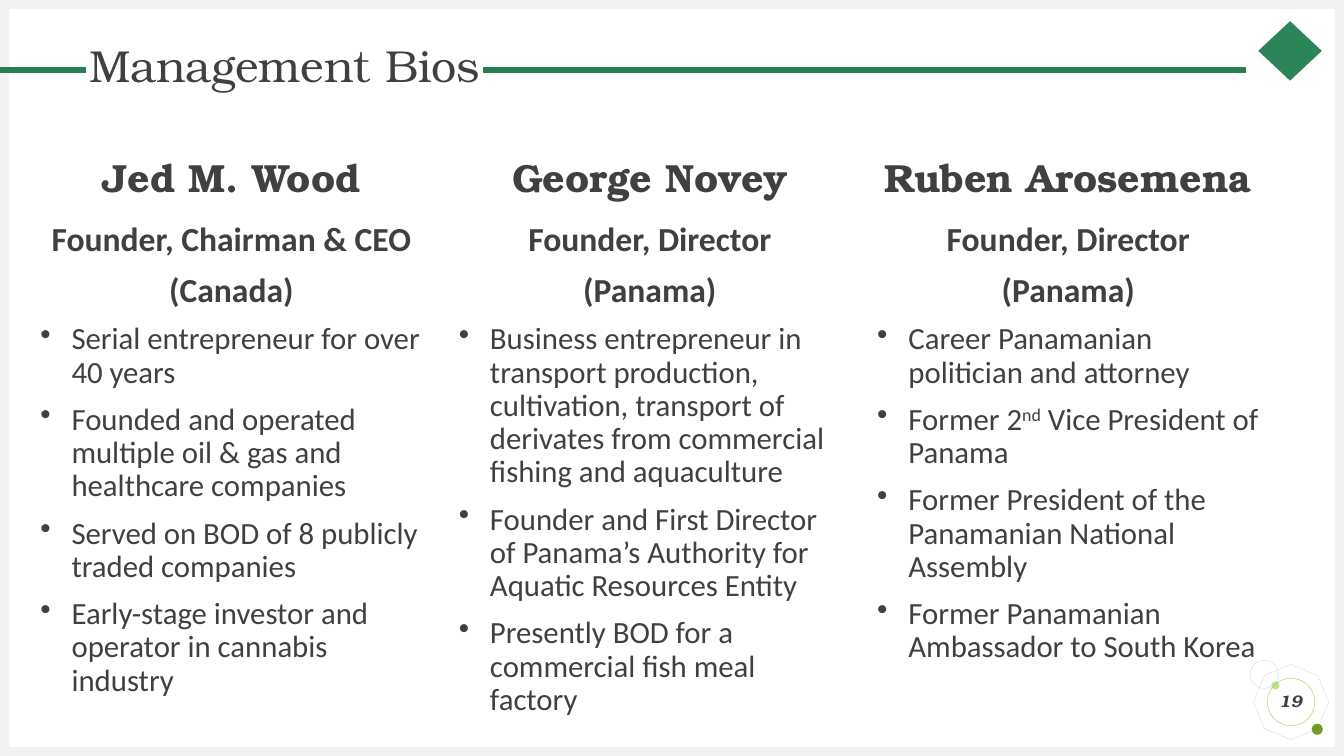
import pptx
import pptx.util
import pptx.dml.color
import pptx.enum.shapes
import pptx.enum.text
import lxml.etree

RGBColor = pptx.dml.color.RGBColor
Inches, Pt = pptx.util.Inches, pptx.util.Pt
MSO = pptx.enum.shapes.MSO_SHAPE
CENTER = pptx.enum.text.PP_ALIGN.CENTER
MIDDLE = pptx.enum.text.MSO_ANCHOR.MIDDLE

WHITE = RGBColor(0xFF, 0xFF, 0xFF)
TEXT = RGBColor(0x40, 0x40, 0x40)
FRAME = RGBColor(0xF2, 0xF2, 0xF2)
BAR = RGBColor(0x29, 0x7D, 0x53)
LEAF = RGBColor(0x2C, 0x85, 0x58)
OUTLINE = RGBColor(0xD9, 0xD9, 0xD9)
LIME = RGBColor(0x9A, 0xCB, 0x39)
PALE_LIME = RGBColor(0xC2, 0xE0, 0x88)
OLIVE = RGBColor(0x74, 0x9A, 0x29)

SERIF, SANS = "TeX Gyre Bonum", "Calibri"
TITLE_FONT = {"name": SERIF, "size": Pt(32), "bold": False}
NAME_FONT = {"name": SERIF, "size": Pt(28), "bold": True}
ROLE_FONT = {"name": SANS, "size": Pt(24), "bold": True}
BULLET_FONT = {"name": SANS, "size": Pt(22), "bold": False}
NUMBER_FONT = {"name": SERIF, "size": Pt(12), "bold": True, "italic": True}

W, H, EDGE = 13.33, 7.5, 0.09
LEFT, COL_W, PITCH = 0.4, 3.79, 4.15
NAME_TOP, BIO_TOP = 1.57, 2.21

prs = pptx.Presentation()
prs.slide_width, prs.slide_height = Inches(W), Inches(H)
s = prs.slides.add_slide(prs.slide_layouts[5])


def add_shape(kind, box, fill=None, line=None, weight=0.25, rotation=0):
    sp = s.shapes.add_shape(kind, *map(Inches, box))
    sp.shadow.inherit = False
    sp.rotation = rotation
    for part, color in ((sp.fill, fill), (sp.line.fill, line)):
        if color is None:
            part.background()
        else:
            part.solid()
            part.fore_color.rgb = color
    if line is not None:
        sp.line.width = Pt(weight)
    return sp


def write(sp, lines, anchor=pptx.enum.text.MSO_ANCHOR.TOP):
    """Fill a shape with (text, font) lines; ^ marks toggle superscript."""
    tf = sp.text_frame
    frame = {"word_wrap": True, "vertical_anchor": anchor,
             "auto_size": pptx.enum.text.MSO_AUTO_SIZE.NONE,
             "margin_left": 0, "margin_right": 0, "margin_top": 0, "margin_bottom": 0}
    for key, value in frame.items():
        setattr(tf, key, value)
    for i, (text, font) in enumerate(lines):
        p = tf.add_paragraph() if i else tf.paragraphs[0]
        p.line_spacing = 0.9
        p.space_before = Pt(10 if i else 0)
        if font is BULLET_FONT:
            pPr = p._p.get_or_add_pPr()
            pPr.set("marL", str(Inches(0.31)))
            pPr.set("indent", str(-Inches(0.31)))
            bu = lxml.etree.SubElement(pPr, pptx.oxml.ns.qn("a:buChar"))
            bu.set("char", "•")
        else:
            p.alignment = CENTER
        for j, part in enumerate(text.split("^")):
            r = p.add_run()
            r.text = part
            for key, value in font.items():
                setattr(r.font, key, value)
            r.font.color.rgb = TEXT
            if j % 2:
                r._r.get_or_add_rPr().set("baseline", "30000")


# Frame around the slide
for box in ((0, 0, W, EDGE), (0, H - EDGE, W, EDGE),
            (0, 0, EDGE, H), (W - EDGE, 0, EDGE, H)):
    add_shape(MSO.RECTANGLE, box, fill=FRAME)

# Title between two green bars, with a plain emblem at the right
title = s.shapes.title
title.left, title.top, title.width, title.height = map(Inches, (0.85, 0.4, 3.95, 0.55))
title.fill.solid()
title.fill.fore_color.rgb = WHITE
write(title, [("Management Bios", TITLE_FONT)], MIDDLE)
for x, width in ((0, 0.85), (4.8, 7.55)):
    add_shape(MSO.RECTANGLE, (x, 0.67, width, 0.05), fill=BAR, line=BAR, weight=1)
add_shape(MSO.DIAMOND, (12.48, 0.21, 0.63, 0.59), fill=LEAF)

# One column per manager: name, role, country, bullets
bios = [
    ("Jed M. Wood", "Founder, Chairman & CEO", "(Canada)", [
        "Serial entrepreneur for over 40 years",
        "Founded and operated multiple oil & gas and healthcare companies",
        "Served on BOD of 8 publicly traded companies",
        "Early-stage investor and operator in cannabis industry"]),
    ("George Novey", "Founder, Director", "(Panama)", [
        "Business entrepreneur in transport production, cultivation, transport of "
        "derivates from commercial fishing and aquaculture",
        "Founder and First Director of Panama’s Authority for Aquatic Resources Entity",
        "Presently BOD for a commercial fish meal factory"]),
    ("Ruben Arosemena", "Founder, Director", "(Panama)", [
        "Career Panamanian politician and attorney",
        "Former 2^nd^ Vice President of Panama",
        "Former President of the Panamanian National Assembly",
        "Former Panamanian Ambassador to South Korea"]),
]
for col, (name, role, country, bullets) in enumerate(bios):
    bio = [(role, ROLE_FONT), (country, ROLE_FONT)] + [(b, BULLET_FONT) for b in bullets]
    for top, height, lines in ((NAME_TOP, 0.6, [(name, NAME_FONT)]), (BIO_TOP, 3.67, bio)):
        box = (LEFT + col * PITCH, top, COL_W, height)
        write(s.shapes.add_textbox(*map(Inches, box)), lines)

# Slide number badge
add_shape(MSO.OCTAGON, (12.46, 6.62, 0.69, 0.69), line=OUTLINE, rotation=22.7)
for x, y, size, fill, line in ((12.61, 6.76, 0.08, PALE_LIME, None),
                               (13.01, 7.18, 0.11, OLIVE, None),
                               (12.4, 6.55, 0.28, None, OUTLINE)):
    add_shape(MSO.OVAL, (x, y, size, size), fill=fill, line=line)
badge = add_shape(MSO.OVAL, (12.57, 6.73, 0.47, 0.47), line=LIME)
write(badge, [("19", NUMBER_FONT)], MIDDLE)

prs.save("out.pptx")
